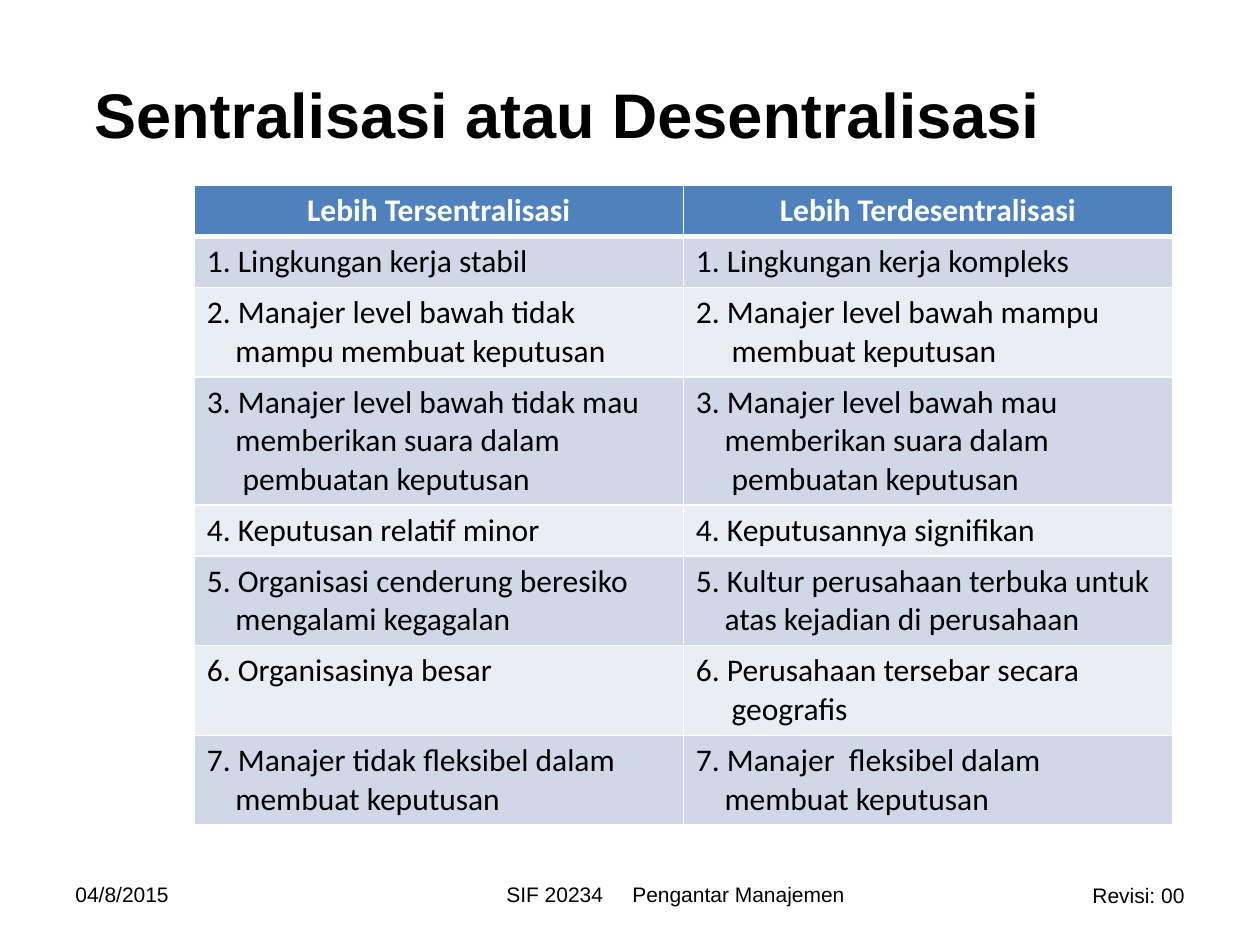
from lxml.etree import SubElement
from pptx import Presentation
from pptx.dml.color import RGBColor
from pptx.enum.text import MSO_ANCHOR, PP_ALIGN
from pptx.oxml.ns import qn
from pptx.util import Pt

BLACK = RGBColor(0x00, 0x00, 0x00)
WHITE = RGBColor(0xFF, 0xFF, 0xFF)
HEADER_BLUE = RGBColor(0x4F, 0x81, 0xBD)
BAND_DARK = RGBColor(0xD0, 0xD8, 0xE8)
BAND_LIGHT = RGBColor(0xE9, 0xED, 0xF4)

TITLE = {"name": "Arial", "size": Pt(36), "bold": True}
FOOTER = {"name": "Arial", "size": Pt(12), "bold": False}
HEADER = {"name": "Calibri", "size": Pt(18), "bold": True}
BODY = {"name": "Calibri", "size": Pt(18), "bold": False}

# Each cell is a list of lines; a continuation line is (indent in points, text)
HEADINGS = (["Lebih Tersentralisasi"], ["Lebih Terdesentralisasi"])
COMPARISON = [
    (["1. Lingkungan kerja stabil"], ["1. Lingkungan kerja kompleks"]),
    (["2. Manajer level bawah tidak", (16.3, "mampu membuat keputusan")],
     ["2. Manajer level bawah mampu", (20.4, "membuat keputusan")]),
    (["3. Manajer level bawah tidak mau", (16.3, "memberikan suara dalam"),
      (20.4, "pembuatan keputusan")],
     ["3. Manajer level bawah mau", (16.3, "memberikan suara dalam"),
      (20.4, "pembuatan keputusan")]),
    (["4. Keputusan relatif minor"], ["4. Keputusannya signifikan"]),
    (["5. Organisasi cenderung beresiko", (16.3, "mengalami kegagalan")],
     ["5. Kultur perusahaan terbuka untuk", (16.3, "atas kejadian di perusahaan")]),
    (["6. Organisasinya besar"],
     ["6. Perusahaan tersebar secara", (20.4, "geografis")]),
    (["7. Manajer tidak fleksibel dalam", (16.3, "membuat keputusan")],
     ["7. Manajer  fleksibel dalam", (16.3, "membuat keputusan")]),
]


class SlideBuilder:
    line_height = 22
    cell_padding = 7.2

    def __init__(self, presentation):
        self.slide = presentation.slides.add_slide(presentation.slide_layouts[6])

    def add_run(self, paragraph, text, style, color=BLACK):
        run = paragraph.add_run()
        run.text = text
        for name, value in style.items():
            setattr(run.font, name, value)
        run.font.color.rgb = color
        return run

    def text(self, box, parts, style, align, anchor=MSO_ANCHOR.TOP, gap=0):
        """Write the parts on one line, with a widened space between them."""
        shape = self.slide.shapes.add_textbox(*map(Pt, box))
        frame = shape.text_frame
        frame.word_wrap = True
        frame.vertical_anchor = anchor
        paragraph = frame.paragraphs[0]
        paragraph.alignment = align
        for index, part in enumerate(parts):
            if index:
                space = self.add_run(paragraph, " ", style)
                space.font._element.set("spc", str(round(gap * 100)))
            self.add_run(paragraph, part, style)

    def borders(self, cell, bottom_width):
        properties = cell._tc.get_or_add_tcPr()
        for side, width in (("L", 1), ("R", 1), ("T", 1), ("B", bottom_width)):
            line = SubElement(properties, qn(f"a:ln{side}"), w=str(Pt(width)))
            fill = SubElement(line, qn("a:solidFill"))
            SubElement(fill, qn("a:srgbClr"), val=str(WHITE))

    def cell(self, cell, lines, style, color, fill, align, bottom_width):
        self.borders(cell, bottom_width)
        cell.fill.solid()
        cell.fill.fore_color.rgb = fill
        frame = cell.text_frame
        for index, line in enumerate(lines):
            paragraph = frame.add_paragraph() if index else frame.paragraphs[0]
            paragraph.alignment = align
            indent, text = line if isinstance(line, tuple) else (0, line)
            if indent:
                paragraph._p.get_or_add_pPr().set("marL", str(Pt(indent)))
            self.add_run(paragraph, text, style, color)

    def table(self, left, top, width, headings, rows):
        all_rows = [headings, *rows]
        heights = [self.cell_padding + self.line_height * max(map(len, row))
                   for row in all_rows]
        table = self.slide.shapes.add_table(
            len(all_rows), len(headings),
            Pt(left), Pt(top), Pt(width), Pt(sum(heights))).table
        for row_index, row in enumerate(all_rows):
            table.rows[row_index].height = Pt(heights[row_index])
            if row_index == 0:
                look = (HEADER, WHITE, HEADER_BLUE, PP_ALIGN.CENTER, 3)
            else:
                band = BAND_DARK if row_index % 2 else BAND_LIGHT
                look = (BODY, BLACK, band, PP_ALIGN.LEFT, 1)
            for column_index, lines in enumerate(row):
                self.cell(table.cell(row_index, column_index), lines, *look)


def main():
    presentation = Presentation()
    presentation.slide_width, presentation.slide_height = Pt(720), Pt(540)
    builder = SlideBuilder(presentation)

    # Title
    builder.text((0, 20, 648, 90), ["Sentralisasi atau Desentralisasi"],
                 TITLE, PP_ALIGN.CENTER, MSO_ANCHOR.MIDDLE)

    # Comparison table
    builder.table(111, 105.8, 559, HEADINGS, COMPARISON)

    # Footer
    builder.text((36, 500.4, 168, 28.8), ["04/8/2015"], FOOTER, PP_ALIGN.LEFT)
    builder.text((190, 500.4, 392, 30), ["SIF 20234", "Pengantar Manajemen"],
                 FOOTER, PP_ALIGN.CENTER, gap=13.3)
    builder.text((516, 501, 168, 21.6), ["Revisi: 00"], FOOTER, PP_ALIGN.RIGHT)

    presentation.save("out.pptx")


if __name__ == "__main__":
    main()
